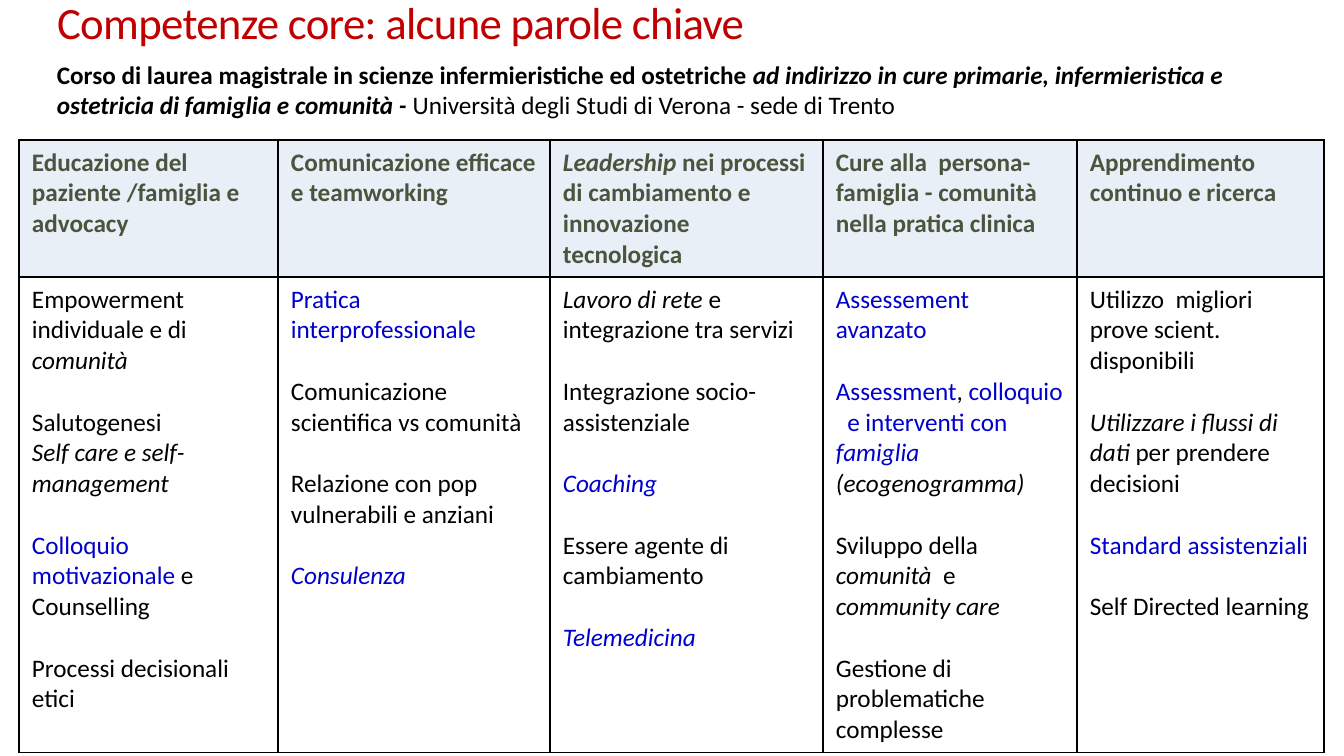
from lxml.etree import SubElement
from pptx import Presentation
from pptx.dml.color import RGBColor
from pptx.enum.text import MSO_ANCHOR, MSO_AUTO_SIZE, PP_ALIGN
from pptx.oxml.ns import qn
from pptx.util import Pt

EMU_PER_PX = 914400 / 100.8
FONT = "Calibri"
BLACK, BLUE, RED, OLIVE = "000000", "0000CC", "C00000", "4A543E"
WHITE, PALE = "FFFFFF", "E9EFF7"
LINE_GAP = 22

PLAIN = (BLACK, False, False)
ITALIC = (BLACK, False, True)
KEY = (BLUE, False, False)
KEY_ITALIC = (BLUE, False, True)
HEAD = (OLIVE, True, False)
HEAD_ITALIC = (OLIVE, True, True)
BOLD = (BLACK, True, False)
BOLD_ITALIC = (BLACK, True, True)

TITLE = "Competenze core: alcune parole chiave"
COURSE = [
    ("Corso di laurea magistrale in scienze infermieristiche ed ostetriche ", BOLD),
    ("ad indirizzo in cure primarie, infermieristica e ostetricia di famiglia e comunità - ", BOLD_ITALIC),
    ("Università degli Studi di Verona - sede di Trento", PLAIN),
]

# Each cell: topics; each topic: paragraphs; each paragraph: (words, style) runs.
AREAS = [
    [[[("Educazione del paziente /famiglia e advocacy", HEAD)]]],
    [[[("Comunicazione efficace e teamworking", HEAD)]]],
    [[[("Leadership", HEAD_ITALIC),
       (" nei processi di cambiamento e innovazione tecnologica", HEAD)]]],
    [[[("Cure alla  persona-famiglia - comunità  nella pratica clinica", HEAD)]]],
    [[[("Apprendimento continuo e ricerca", HEAD)]]],
]
KEYWORDS = [
    [
        [[("Empowerment individuale e di ", PLAIN), ("comunità", ITALIC)]],
        [[("Salutogenesi", PLAIN)], [("Self care e self-management", ITALIC)]],
        [[("Colloquio motivazionale ", KEY), ("e", PLAIN)], [("Counselling", PLAIN)]],
        [[("Processi decisionali etici", PLAIN)]],
    ],
    [
        [[("Pratica interprofessionale", KEY)]],
        [[("Comunicazione scientifica vs comunità", PLAIN)]],
        [[("Relazione con pop vulnerabili e anziani", PLAIN)]],
        [[("Consulenza", KEY_ITALIC)]],
    ],
    [
        [[("Lavoro di rete ", ITALIC), ("e integrazione tra servizi", PLAIN)]],
        [[("Integrazione socio-", PLAIN)], [("assistenziale", PLAIN)]],
        [[("Coaching", KEY_ITALIC)]],
        [[("Essere agente di cambiamento", PLAIN)]],
        [[("Telemedicina", KEY_ITALIC)]],
    ],
    [
        [[("Assessement avanzato", KEY)]],
        [[("Assessment", KEY), (", ", PLAIN), ("colloquio   e interventi con ", KEY),
          ("famiglia ", KEY_ITALIC), ("(ecogenogramma)", ITALIC)]],
        [[("Sviluppo della ", PLAIN), ("comunità ", ITALIC), (" e ", PLAIN),
          (" community care", ITALIC)]],
        [[("Gestione di problematiche  complesse", PLAIN)]],
    ],
    [
        [[("Utilizzo  migliori prove scient. disponibili", PLAIN)]],
        [[("Utilizzare i flussi di dati ", ITALIC), ("per prendere decisioni", PLAIN)]],
        [[("Standard assistenziali", KEY)]],
        [[("Self Directed learning", PLAIN)]],
    ],
]
COLUMN_WIDTHS = [259, 272, 273, 254, 247]
ROWS = [(AREAS, 137, PALE), (KEYWORDS, 474, WHITE)]


def px(length):
    return round(length * EMU_PER_PX)


def color(value):
    return RGBColor.from_string(value)


def write_runs(paragraph, runs):
    for words, (ink, bold, italic) in runs:
        run = paragraph.add_run()
        run.text = words
        run.font.name, run.font.size = FONT, Pt(18)
        run.font.bold, run.font.italic = bold, italic
        run.font.color.rgb = color(ink)


def write_topics(frame, topics):
    paragraph = None
    for topic in topics:
        for position, runs in enumerate(topic):
            starts_topic = paragraph is not None and position == 0
            paragraph = frame.paragraphs[0] if paragraph is None else frame.add_paragraph()
            paragraph.space_before = Pt(LINE_GAP if starts_topic else 0)
            write_runs(paragraph, runs)


def border(cell):
    properties = cell._tc.get_or_add_tcPr()
    for side in ("a:lnL", "a:lnR", "a:lnT", "a:lnB"):
        edge = SubElement(properties, qn(side), w=str(Pt(1)))
        SubElement(SubElement(edge, qn("a:solidFill")), qn("a:srgbClr"), val=BLACK)


def main():
    deck = Presentation()
    deck.slide_width, deck.slide_height = px(1344), px(756)
    slide = deck.slides.add_slide(deck.slide_layouts[5])

    title = slide.shapes.title
    title.left, title.top, title.width, title.height = px(47), px(14), px(1210), px(40)
    title.fill.solid()
    title.fill.fore_color.rgb = color(WHITE)
    title.text_frame.text = TITLE
    title.text_frame.auto_size = MSO_AUTO_SIZE.NONE
    title.text_frame.vertical_anchor = MSO_ANCHOR.BOTTOM
    heading = title.text_frame.paragraphs[0]
    heading.alignment, heading.line_spacing = PP_ALIGN.LEFT, 0.85
    heading_font = heading.runs[0].font
    heading_font.name, heading_font.size = FONT, Pt(32)
    heading_font.color.rgb = color(RED)
    heading.runs[0]._r.get_or_add_rPr().set("spc", "-50")

    table = slide.shapes.add_table(
        len(ROWS), len(COLUMN_WIDTHS), px(19), px(140),
        px(sum(COLUMN_WIDTHS)), px(sum(height for _, height, _ in ROWS))).table
    table.first_row = table.horz_banding = False
    for column, width in zip(table.columns, COLUMN_WIDTHS):
        column.width = px(width)
    for row, (contents, height, background) in zip(table.rows, ROWS):
        row.height = px(height)
        for cell, topics in zip(row.cells, contents):
            cell.margin_left = cell.margin_right = px(13)
            cell.margin_top = cell.margin_bottom = px(7)
            border(cell)
            cell.fill.solid()
            cell.fill.fore_color.rgb = color(background)
            write_topics(cell.text_frame, topics)

    course = slide.shapes.add_textbox(px(47), px(54), px(1263), px(72))
    course.line.color.rgb = color(WHITE)
    course.line.width = Pt(0.75)
    course.text_frame.word_wrap = True
    write_runs(course.text_frame.paragraphs[0], COURSE)

    deck.save("out.pptx")


if __name__ == "__main__":
    main()
